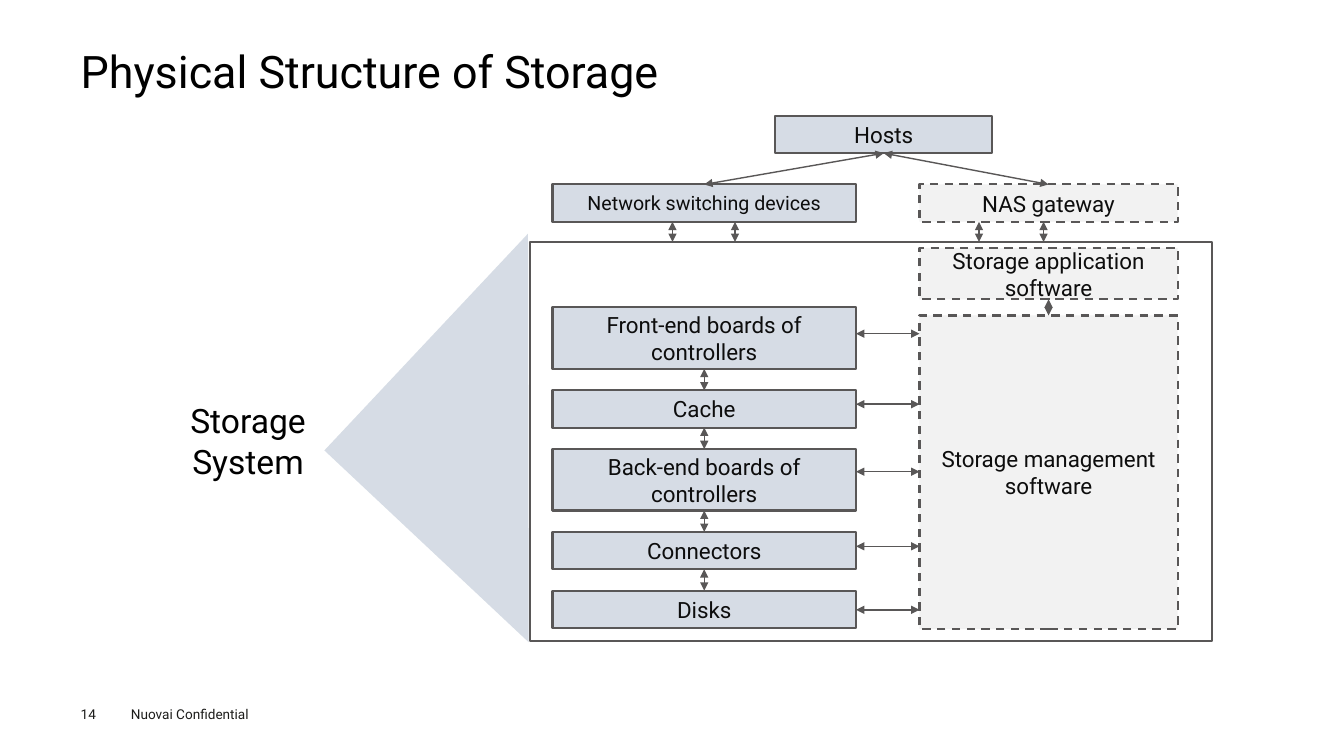
"""Builds the slide on the physical structure of a storage system."""
from lxml.etree import SubElement
from pptx import Presentation
from pptx.dml.color import RGBColor
from pptx.enum.dml import MSO_LINE
from pptx.enum.shapes import MSO_CONNECTOR, MSO_SHAPE
from pptx.enum.text import MSO_ANCHOR, PP_ALIGN
from pptx.oxml.ns import qn
from pptx.util import Inches, Pt

FONT = "Roboto"
LINE, BLUE, GREY, INK = "595757", "D6DCE5", "F2F2F2", "0D0D0D"

TITLE = "Physical Structure of Storage"
SYSTEM_LABEL = ["Storage", "System"]
PAGE_NUMBER = "14"
CONFIDENTIALITY = "Nuovai Confidential"

HARDWARE_LEFT, HARDWARE_WIDTH = 5.48, 3.01
SOFTWARE_LEFT, SOFTWARE_WIDTH = 9.12, 2.56
ROW_HEIGHT = 0.37
HOSTS = ("Hosts", 7.69, 1.15, 2.15)
NETWORK_TOP = 1.83
FRAME = (5.26, 2.4, 6.76, 3.96)
CALLOUT = (3.85, 2.87, 2.78, 2.95)
CALLOUT_ANGLE = 43.2

HARDWARE = [
    ("Front-end boards of controllers", 0.61, 3.31),
    ("Cache", ROW_HEIGHT, 4.01),
    ("Back-end boards of controllers", 0.61, 4.68),
    ("Connectors", ROW_HEIGHT, 5.42),
    ("Disks", ROW_HEIGHT, 6.05),
]
STACK_TOP, STACK_BOTTOM = 3.05, 6.23
SOFTWARE = [
    ("NAS gateway", NETWORK_TOP, ROW_HEIGHT),
    ("Storage management software", 3.13, 3.11),
    ("Storage application software", 2.46, 0.51),
]
FRAME_LINKS = [6.67, 7.29, 9.71, 10.35]

deck = Presentation()
deck.slide_width, deck.slide_height = Inches(13.33), Inches(7.5)
slide = deck.slides.add_slide(deck.slide_layouts[6])
shapes = slide.shapes


def color(value):
    return RGBColor.from_string(value)


def inches(values):
    return [Inches(value) for value in values]


def write(shape, *lines, size=16, ink=INK, align=PP_ALIGN.CENTER,
          anchor=MSO_ANCHOR.MIDDLE, wrap=True, inset=True, spacing=None):
    frame = shape.text_frame
    frame.word_wrap, frame.vertical_anchor = wrap, anchor
    if not inset:
        frame.margin_left = frame.margin_right = 0
        frame.margin_top = frame.margin_bottom = 0
    frame.text = "\n".join(lines)
    for paragraph in frame.paragraphs:
        paragraph.alignment = align
        if spacing:
            paragraph.line_spacing = spacing
        font = paragraph.font
        font.name, font.size = FONT, Pt(size)
        font.color.rgb = color(ink)


def label(place, *lines, **style):
    write(shapes.add_textbox(*inches(place)), *lines,
          **{"anchor": MSO_ANCHOR.TOP, **style})


def block(place, fill=None, outlined=True, dashed=False, kind=MSO_SHAPE.RECTANGLE):
    shape = shapes.add_shape(kind, *inches(place))
    shape.shadow.inherit = False
    if fill:
        shape.fill.solid()
        shape.fill.fore_color.rgb = color(fill)
    else:
        shape.fill.background()
    if outlined:
        shape.line.color.rgb = color(LINE)
        shape.line.width = Pt(1.5)
        if dashed:
            shape.line.dash_style = MSO_LINE.DASH
    else:
        shape.line.fill.background()
    return shape


def arrow(*ends):
    link = shapes.add_connector(MSO_CONNECTOR.STRAIGHT, *inches(ends))
    link.line.color.rgb = color(LINE)
    link.line.width = Pt(1)
    outline = link.line._get_or_add_ln()
    for end in ("a:headEnd", "a:tailEnd"):
        SubElement(outline, qn(end), type="triangle")
    SubElement(link._element.spPr, qn("a:effectLst"))


label((0.8, 0.49, 11.73, 0.54), TITLE, size=32, ink="000000",
      align=PP_ALIGN.LEFT, inset=False, spacing=0.9)
label((1.2, 6.95, 1.6, 0.27), CONFIDENTIALITY, size=9.7, ink="1D1D1B",
      align=PP_ALIGN.LEFT)
label((0.8, 7, 0.55, 0.16), PAGE_NUMBER, size=9.7, ink="1D1D1B",
      align=PP_ALIGN.LEFT, inset=False)

write(block((HARDWARE_LEFT, NETWORK_TOP, HARDWARE_WIDTH, ROW_HEIGHT), BLUE),
      "Network switching devices", size=14)
hosts_name, hosts_left, hosts_top, hosts_width = HOSTS
write(block((hosts_left, hosts_top, hosts_width, ROW_HEIGHT), BLUE), hosts_name)
for name, top, height in SOFTWARE:
    write(block((SOFTWARE_LEFT, top, SOFTWARE_WIDTH, height), GREY, dashed=True), name)

block(FRAME)
callout = block(CALLOUT, BLUE, outlined=False, kind=MSO_SHAPE.RIGHT_TRIANGLE)
callout.rotation = CALLOUT_ANGLE
label((1.77, 3.92, 1.38, 0.85), *SYSTEM_LABEL, size=24, ink="000000", wrap=False)

hardware_middle = HARDWARE_LEFT + HARDWARE_WIDTH / 2
software_middle = SOFTWARE_LEFT + SOFTWARE_WIDTH / 2
hosts_middle = hosts_left + hosts_width / 2
gap = (STACK_BOTTOM - STACK_TOP - sum(row[1] for row in HARDWARE)) / (len(HARDWARE) - 1)

top = STACK_TOP
for name, height, link_y in HARDWARE:
    write(block((HARDWARE_LEFT, top, HARDWARE_WIDTH, height), BLUE), name)
    arrow(HARDWARE_LEFT + HARDWARE_WIDTH, link_y, SOFTWARE_LEFT, link_y)
    if top > STACK_TOP:
        arrow(hardware_middle, top - gap, hardware_middle, top)
    top += height + gap

for x in FRAME_LINKS:
    arrow(x, NETWORK_TOP + ROW_HEIGHT, x, FRAME[1])
for middle in (software_middle, hardware_middle):
    arrow(hosts_middle, hosts_top + ROW_HEIGHT, middle, NETWORK_TOP)
arrow(software_middle, 2.97, software_middle, 3.13)

deck.save("out.pptx")
